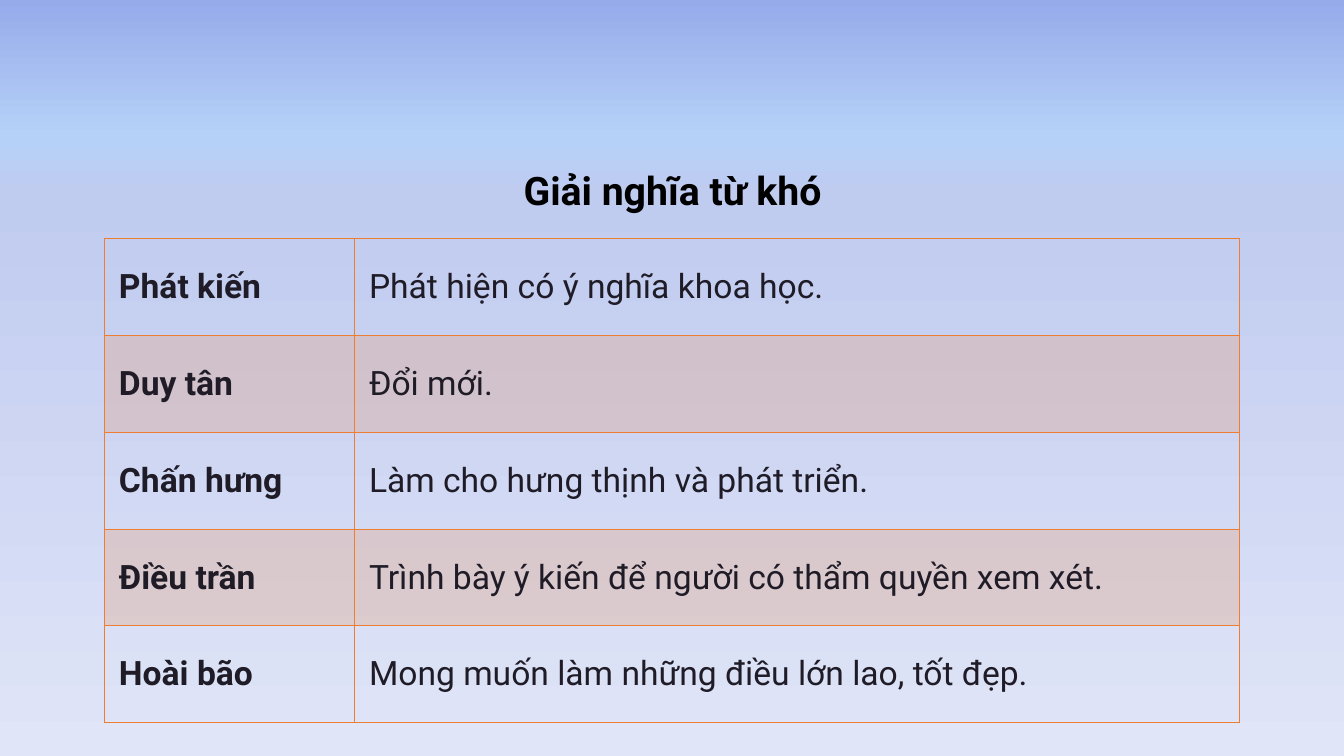
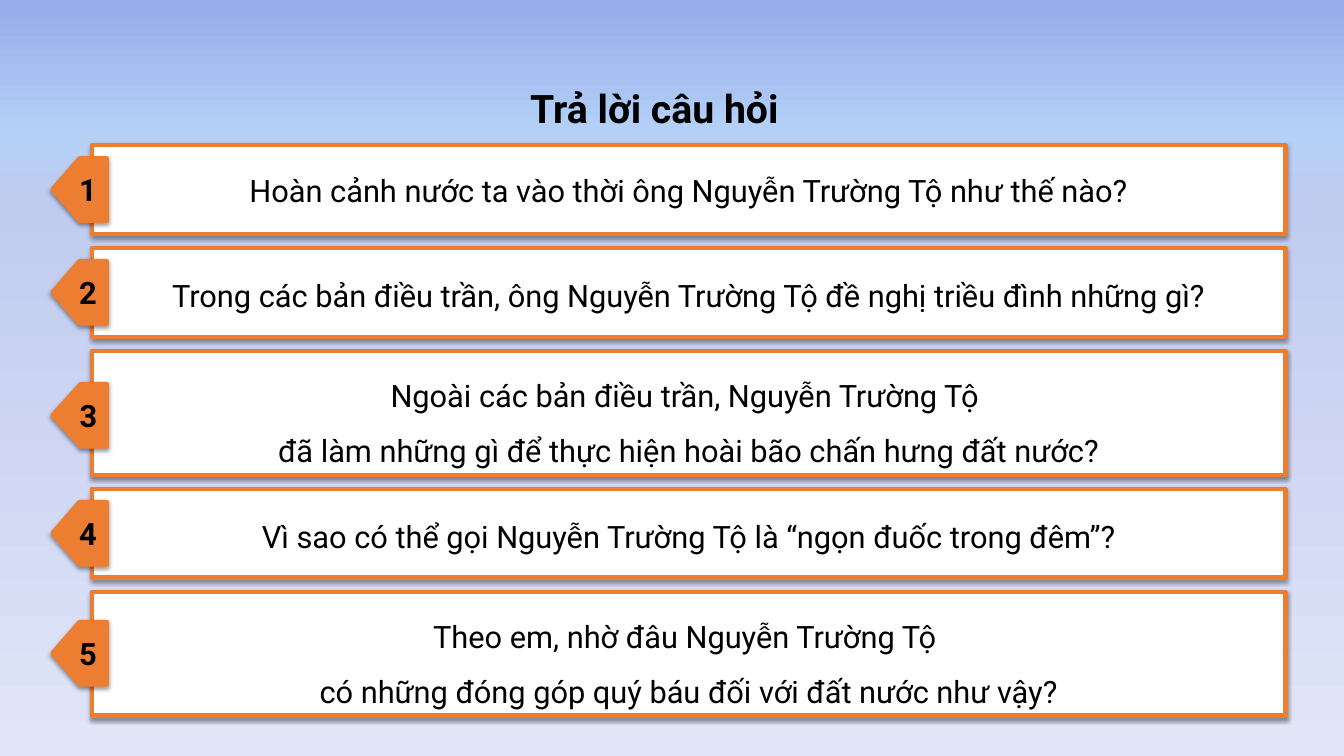
from dataclasses import dataclass

from lxml import etree
from pptx import Presentation
from pptx.dml.color import RGBColor
from pptx.enum.shapes import MSO_SHAPE
from pptx.enum.text import MSO_ANCHOR, MSO_AUTO_SIZE, PP_ALIGN
from pptx.oxml.ns import qn
from pptx.util import Emu, Pt

RECTANGLE = MSO_SHAPE.RECTANGLE
PENTAGON = MSO_SHAPE.PENTAGON
MIDDLE = MSO_ANCHOR.MIDDLE
NO_AUTOFIT = MSO_AUTO_SIZE.NONE
CENTER, LEFT, JUSTIFY = PP_ALIGN.CENTER, PP_ALIGN.LEFT, PP_ALIGN.JUSTIFY
TITLE_ONLY = 5
PX = 9144


@dataclass(frozen=True)
class Theme:
    font: str = "Roboto"
    black: str = "000000"
    ink: str = "1F1C27"
    white: str = "FFFFFF"
    accent: str = "ED7D31"
    backdrop: tuple = ((0, "96ABEA"), (18, "B5D1F7"), (26, "C0CBF0"), (100, "E0E5F7"))
    band_opacity: int = 20
    shadow_opacity: int = 38
    shadow_blur: float = 3.1
    shadow_distance: float = 1.6
    title_size: int = 28
    table_size: int = 24
    question_size: int = 22
    frame_width: int = 3
    rule_width: float = 0.75


@dataclass(frozen=True)
class Area:
    left: int
    top: int
    width: int
    height: int

    def emu(self) -> tuple:
        return tuple(px(n) for n in (self.left, self.top, self.width, self.height))


@dataclass(frozen=True)
class Term:
    word: str
    meaning: str


@dataclass(frozen=True)
class Question:
    lines: tuple
    height: int = 88
    spacing: float = 1.14
    tag_drop: int = 0
    tag_point: float = 0.5


THEME = Theme()
TERMS = (
    Term("Phát kiến", "Phát hiện có ý nghĩa khoa học."),
    Term("Duy tân", "Đổi mới."),
    Term("Chấn hưng", "Làm cho hưng thịnh và phát triển."),
    Term("Điều trần", "Trình bày ý kiến để người có thẩm quyền xem xét."),
    Term("Hoài bão", "Mong muốn làm những điều lớn lao, tốt đẹp."),
)
QUESTIONS = (
    Question(("Hoàn cảnh nước ta vào thời ông Nguyễn Trường Tộ như thế nào?",), spacing=1.0),
    Question(("Trong các bản điều trần, ông Nguyễn Trường Tộ đề nghị triều đình những gì?",)),
    Question(
        (
            "Ngoài các bản điều trần, Nguyễn Trường Tộ ",
            "đã làm những gì để thực hiện hoài bão chấn hưng đất nước?",
        ),
        height=123, spacing=1.5, tag_drop=3, tag_point=0.52,
    ),
    Question(("Vì sao có thể gọi Nguyễn Trường Tộ là “ngọn đuốc trong đêm”?",)),
    Question(
        (
            "Theo em, nhờ đâu Nguyễn Trường Tộ ",
            "có những đóng góp quý báu đối với đất nước như vậy?",
        ),
        height=123, spacing=1.5,
    ),
)
TITLE_INSETS = (13, 13, 13, 13)
BOX_INSETS = (13, 6, 13, 5)
TAG_INSETS = (13, 6, 13, 6)
CELL_INSETS = (14, 7, 14, 7)


def px(length: int) -> Emu:
    return Emu(length * PX)


def color(value: str) -> RGBColor:
    return RGBColor.from_string(value)


def add_color(parent, value: str):
    node = etree.SubElement(parent, qn("a:srgbClr"))
    node.set("val", value)
    return node


def add_opacity(color_node, percent: int) -> None:
    etree.SubElement(color_node, qn("a:alpha")).set("val", str(percent * 1000))


def set_insets(target, insets: tuple) -> None:
    (target.margin_left, target.margin_top,
     target.margin_right, target.margin_bottom) = map(px, insets)
    target.vertical_anchor = MIDDLE


def write(frame, lines: tuple, size: int, ink: str, bold: bool = False,
          align=CENTER, spacing: float = 1.0) -> None:
    frame.word_wrap = True
    for index, line in enumerate(lines):
        para = frame.add_paragraph() if index else frame.paragraphs[0]
        para.alignment = align
        para.line_spacing = spacing
        span = para.add_run()
        span.text = line
        span.font.name = THEME.font
        span.font.size = Pt(size)
        span.font.bold = bold
        span.font.color.rgb = color(ink)


def set_backdrop(master) -> None:
    fill = master.background.fill
    fill.gradient()
    fill.gradient_angle = 270
    stops = master.element.find(f".//{qn('p:bg')}//{qn('a:gsLst')}")
    for stop in list(stops):
        stops.remove(stop)
    for position, value in THEME.backdrop:
        stop = etree.SubElement(stops, qn("a:gs"))
        stop.set("pos", str(position * 1000))
        add_color(stop, value)


def add_page(deck, title: str, area: Area):
    page = deck.slides.add_slide(deck.slide_layouts[TITLE_ONLY])
    box = page.shapes.title
    box.left, box.top, box.width, box.height = area.emu()
    frame = box.text_frame
    frame.auto_size = NO_AUTOFIT
    set_insets(frame, TITLE_INSETS)
    write(frame, (title,), THEME.title_size, THEME.black, bold=True)
    return page


def add_borders(cell) -> None:
    properties = cell._tc.get_or_add_tcPr()
    for index, side in enumerate(("lnL", "lnR", "lnT", "lnB")):
        border = etree.Element(qn(f"a:{side}"))
        border.set("w", str(Pt(THEME.rule_width)))
        add_color(etree.SubElement(border, qn("a:solidFill")), THEME.accent)
        properties.insert(index, border)


def format_cell(cell, text: str, banded: bool, bold: bool, align) -> None:
    set_insets(cell, CELL_INSETS)
    write(cell.text_frame, (text,), THEME.table_size, THEME.ink, bold, align)
    if banded:
        cell.fill.solid()
        cell.fill.fore_color.rgb = color(THEME.accent)
        fill = cell._tc.tcPr.find(qn("a:solidFill"))
        add_opacity(fill.find(qn("a:srgbClr")), THEME.band_opacity)
    else:
        cell.fill.background()
    add_borders(cell)


def add_glossary(page, area: Area, widths: tuple) -> None:
    table = page.shapes.add_table(len(TERMS), len(widths), *area.emu()).table
    table.first_row = False
    table.horz_banding = False
    for column, width in zip(table.columns, widths):
        column.width = px(width)
    for index, term in enumerate(TERMS):
        table.rows[index].height = px(area.height // len(TERMS))
        banded = index % 2 == 1
        format_cell(table.cell(index, 0), term.word, banded, True, JUSTIFY)
        format_cell(table.cell(index, 1), term.meaning, banded, False, LEFT)


def add_shadow(shape) -> None:
    shape.shadow.inherit = False
    effects = shape._element.spPr.find(qn("a:effectLst"))
    shadow = etree.SubElement(effects, qn("a:outerShdw"))
    shadow.set("blurRad", str(Pt(THEME.shadow_blur)))
    shadow.set("dist", str(Pt(THEME.shadow_distance)))
    shadow.set("dir", "5400000")
    shadow.set("rotWithShape", "0")
    add_opacity(add_color(shadow, THEME.black), THEME.shadow_opacity)


def add_framed(group, kind, area: Area, fill: str, insets: tuple):
    shape = group.shapes.add_shape(kind, *area.emu())
    shape.fill.solid()
    shape.fill.fore_color.rgb = color(fill)
    shape.line.color.rgb = color(THEME.accent)
    shape.line.width = Pt(THEME.frame_width)
    add_shadow(shape)
    set_insets(shape.text_frame, insets)
    return shape


def add_question(page, number: int, question: Question, top: int) -> None:
    group = page.shapes.add_group_shape()
    box = add_framed(group, RECTANGLE, Area(91, top, 1184, question.height),
                     THEME.white, BOX_INSETS)
    write(box.text_frame, question.lines, THEME.question_size, THEME.black,
          spacing=question.spacing)
    tag_height = 62
    tag_top = top + (question.height - tag_height) // 2 + question.tag_drop
    tag = add_framed(group, PENTAGON, Area(52, tag_top, 54, tag_height),
                     THEME.accent, TAG_INSETS)
    tag.adjustments[0] = question.tag_point
    tag._element.spPr.find(qn("a:xfrm")).set("flipH", "1")
    write(tag.text_frame, (str(number),), THEME.question_size, THEME.black, bold=True)


def add_questions(page, top: int, gap: int) -> None:
    for number, question in enumerate(QUESTIONS, start=1):
        add_question(page, number, question, top)
        top += question.height + gap


def main() -> None:
    deck = Presentation()
    deck.slide_width, deck.slide_height = px(1333), px(750)
    set_backdrop(deck.slide_master)
    glossary = add_page(deck, "Giải nghĩa từ khó", Area(404, 151, 526, 75))
    add_glossary(glossary, Area(104, 237, 1125, 480), (248, 877))
    quiz = add_page(deck, "Trả lời câu hỏi", Area(455, 69, 388, 75))
    add_questions(quiz, top=144, gap=14)
    deck.save("out.pptx")


if __name__ == "__main__":
    main()
